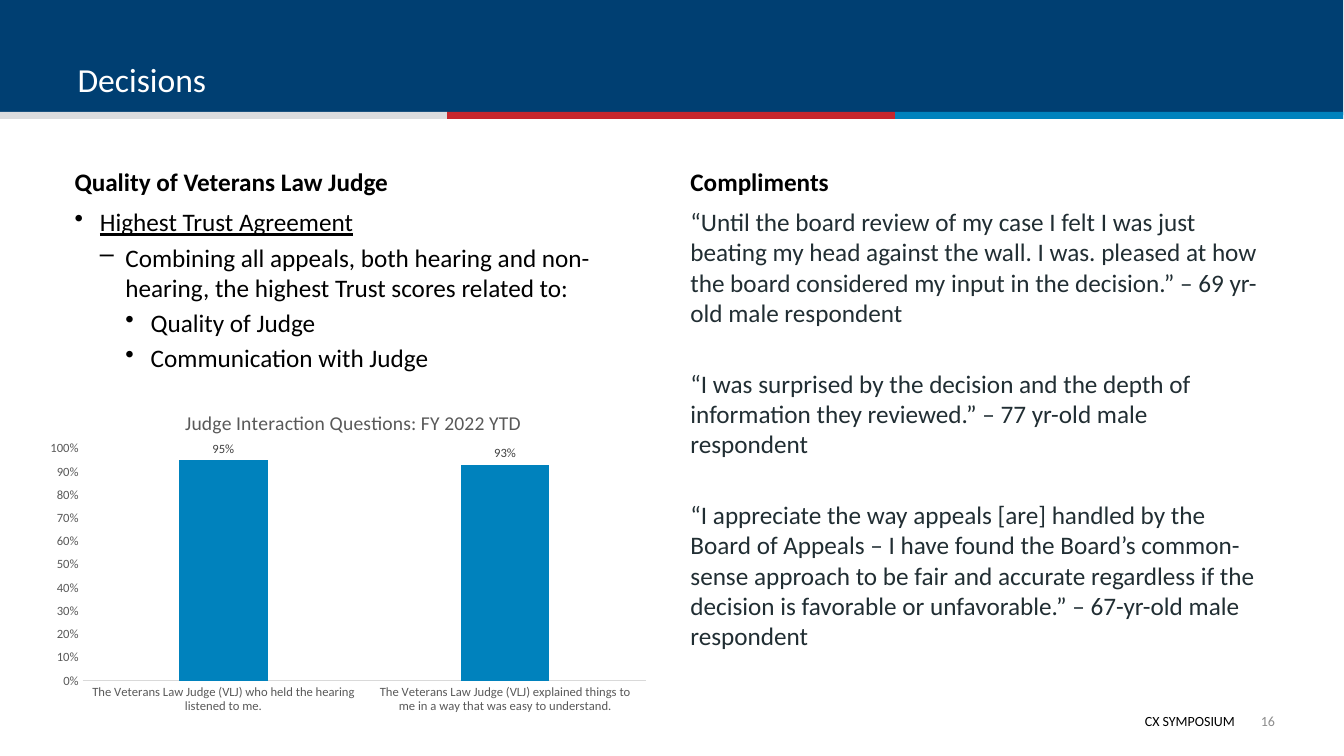
from lxml import etree
from pptx import Presentation
from pptx.chart.data import CategoryChartData
from pptx.dml.color import RGBColor
from pptx.enum.chart import XL_CHART_TYPE, XL_LABEL_POSITION, XL_TICK_MARK
from pptx.enum.shapes import MSO_SHAPE
from pptx.enum.text import MSO_ANCHOR, PP_ALIGN
from pptx.oxml import parse_xml
from pptx.oxml.ns import nsdecls, qn
from pptx.util import Cm, Pt

COLUMN = XL_CHART_TYPE.COLUMN_CLUSTERED
OUTSIDE_END = XL_LABEL_POSITION.OUTSIDE_END
NO_TICK = XL_TICK_MARK.NONE
RECTANGLE = MSO_SHAPE.RECTANGLE
TOP, MIDDLE, BOTTOM = MSO_ANCHOR.TOP, MSO_ANCHOR.MIDDLE, MSO_ANCHOR.BOTTOM
LEFT, RIGHT = PP_ALIGN.LEFT, PP_ALIGN.RIGHT

FONT = "Calibri"
COLORS = {
    "navy": "003F72", "silver": "DBDCDE", "red": "C6262D", "blue": "0082BD",
    "black": "000000", "white": "FFFFFF", "ink": "212E33", "number": "8C8C8C",
    "axis text": "595959", "label text": "404040", "axis line": "D9D9D9",
}

TITLE = "Decisions"
FOOTER = "CX SYMPOSIUM"
SLIDE_NUMBER = "16"
JUDGE_HEADING = "Quality of Veterans Law Judge"
# (level, text)
JUDGE_POINTS = [
    (0, "Highest Trust Agreement"),
    (1, "Combining all appeals, both hearing and non-hearing, "
        "the highest Trust scores related to:"),
    (2, "Quality of Judge"),
    (2, "Communication with Judge"),
]
COMPLIMENTS_HEADING = "Compliments"
COMPLIMENTS = [
    "“Until the board review of my case I felt I was just beating my head against "
    "the wall. I was. pleased at how the board considered my input in the decision.” "
    "– 69 yr-old male respondent",
    "“I was surprised by the decision and the depth of information they reviewed.” "
    "– 77 yr-old male respondent",
    "“I appreciate the way appeals [are] handled by the Board of Appeals – I have "
    "found the Board’s common-sense approach to be fair and accurate regardless if "
    "the decision is favorable or unfavorable.” – 67-yr-old male respondent",
]
CHART_TITLE = "Judge Interaction Questions: FY 2022 YTD"
SCORES = {
    "The Veterans Law Judge (VLJ) who held the hearing listened to me.": 0.95,
    "The Veterans Law Judge (VLJ) explained things to me in a way that was "
    "easy to understand.": 0.93,
}

# Lengths in centimetres
SLIDE_SIZE = (33.87, 19.05)
STRIPES = ["silver", "red", "blue"]
STRIPE_LEFT, STRIPE_TOP, STRIPE_WIDTH, STRIPE_HEIGHT = -0.02, 2.82, 11.29, 0.18
JUDGE_LEFT, COMPLIMENTS_LEFT, COLUMN_WIDTH = 1.63, 17.15, 14.96
HEADING_TOP, HEADING_HEIGHT = 3.3, 1.78
BODY_TOP, BODY_HEIGHT = HEADING_TOP + HEADING_HEIGHT, 12.34
INDENT_STEP = 0.64
BULLETS = "•–•"
# Points
PARAGRAPH_GAP, QUOTE_GAP = 3.6, 29


def format_font(font, size, color, **extra):
    values = {"name": FONT, "size": Pt(size), "bold": False, **extra}
    for name, value in values.items():
        setattr(font, name, value)
    font.color.rgb = RGBColor.from_string(COLORS[color])


def place(shape, box):
    for name, value in zip(("left", "top", "width", "height"), box):
        setattr(shape, name, Cm(value))


def add_bar(slide, box, color):
    bar = slide.shapes.add_shape(RECTANGLE, *map(Cm, box))
    bar.shadow.inherit = False
    bar.fill.solid()
    bar.fill.fore_color.rgb = RGBColor.from_string(COLORS[color])
    bar.line.fill.background()


def write(shape, texts, size, color, anchor=TOP, align=LEFT, gap=0, **font):
    """Fill a shape with one paragraph per text and return the paragraphs."""
    frame = shape.text_frame
    frame.word_wrap = True
    frame.vertical_anchor = anchor
    frame.text = "\n".join(texts)
    for paragraph in frame.paragraphs:
        paragraph.alignment = align
        paragraph.space_before = Pt(gap)
        format_font(paragraph.runs[0].font, size, color, **font)
    return frame.paragraphs


def add_text(slide, box, texts, size, color, **options):
    shape = slide.shapes.add_textbox(*map(Cm, box))
    return shape, write(shape, texts, size, color, **options)


def add_bullet(paragraph, level):
    paragraph.level = level
    properties = paragraph._p.get_or_add_pPr()
    properties.set("marL", str(Cm(INDENT_STEP * (level + 1))))
    properties.set("indent", str(-Cm(INDENT_STEP)))
    bullet = etree.SubElement(properties, qn("a:buChar"))
    bullet.set("char", BULLETS[level])


def set_layout(parent, inner=False, **fractions):
    """Pin a chart part to fractions of the chart area."""
    for old in parent.findall(qn("c:layout")):
        parent.remove(old)
    target = '<c:layoutTarget val="inner"/>' if inner else ""
    modes = "".join(f'<c:{name}Mode val="edge"/>' for name in "xy")
    values = "".join(f'<c:{name} val="{value}"/>' for name, value in fractions.items())
    layout = parse_xml(f'<c:layout {nsdecls("c")}><c:manualLayout>{target}{modes}'
                       f'{values}</c:manualLayout></c:layout>')
    text = parent.find(qn("c:tx"))
    parent.insert(0 if text is None else 1, layout)


def add_score_chart(slide, box):
    data = CategoryChartData(number_format="0%")
    data.categories = list(SCORES)
    data.add_series("Series 1", list(SCORES.values()))
    chart = slide.shapes.add_chart(COLUMN, *map(Cm, box), data).chart
    format_font(chart.font, 10, "black")
    chart.has_legend = False
    chart.has_title = True
    title_frame = chart.chart_title.text_frame
    title_frame.text = CHART_TITLE
    format_font(title_frame.paragraphs[0].runs[0].font, 14, "axis text")
    chart.chart_title.include_in_layout = False
    set_layout(chart.chart_title._element, x=0.23, y=0.05)
    set_layout(chart._chartSpace.chart.plotArea, inner=True,
               x=0.07, y=0.18, w=0.91, h=0.7)

    for axis in (chart.category_axis, chart.value_axis):
        axis.major_tick_mark = axis.minor_tick_mark = NO_TICK
        axis.has_major_gridlines = False
        format_font(axis.tick_labels.font, 9, "axis text")
    category_line = chart.category_axis.format.line
    category_line.width = Pt(0.75)
    category_line.color.rgb = RGBColor.from_string(COLORS["axis line"])
    value_axis = chart.value_axis
    value_axis.format.line.fill.background()
    value_axis.minimum_scale, value_axis.maximum_scale = 0, 1
    value_axis.major_unit = 0.1
    value_axis.tick_labels.number_format = "0%"
    value_axis.tick_labels.number_format_is_linked = False

    plot = chart.plots[0]
    plot.gap_width, plot.overlap = 219, -27
    plot.vary_by_categories = False
    fill = plot.series[0].format.fill
    fill.solid()
    fill.fore_color.rgb = RGBColor.from_string(COLORS["blue"])
    plot.has_data_labels = True
    labels = plot.data_labels
    label_format = {"show_value": True, "position": OUTSIDE_END,
                    "number_format": "0%", "number_format_is_linked": False}
    for name, value in label_format.items():
        setattr(labels, name, value)
    format_font(labels.font, 9, "label text")


def main():
    presentation = Presentation()
    presentation.slide_width, presentation.slide_height = map(Cm, SLIDE_SIZE)
    slide = presentation.slides.add_slide(presentation.slide_layouts[5])

    add_bar(slide, (STRIPE_LEFT, 0, SLIDE_SIZE[0], 2.9), "navy")
    for index, color in enumerate(STRIPES):
        left = STRIPE_LEFT + index * STRIPE_WIDTH
        add_bar(slide, (left, STRIPE_TOP, STRIPE_WIDTH, STRIPE_HEIGHT), color)

    title = slide.shapes.title
    place(title, (1.7, 0.36, 30.48, 2.26))
    write(title, [TITLE], 24, "white", anchor=BOTTOM)
    slide.shapes._spTree.append(title._element)

    for left, heading in ((JUDGE_LEFT, JUDGE_HEADING),
                          (COMPLIMENTS_LEFT, COMPLIMENTS_HEADING)):
        add_text(slide, (left, HEADING_TOP, COLUMN_WIDTH, HEADING_HEIGHT), [heading],
                 18, "black", anchor=BOTTOM, gap=PARAGRAPH_GAP, bold=True)

    points = add_text(slide, (JUDGE_LEFT, BODY_TOP, COLUMN_WIDTH, BODY_HEIGHT),
                      [text for _, text in JUDGE_POINTS], 18, "black",
                      gap=PARAGRAPH_GAP)[1]
    for paragraph, (level, _) in zip(points, JUDGE_POINTS):
        add_bullet(paragraph, level)
        paragraph.runs[0].font.underline = level == 0

    quotes = add_text(slide, (COMPLIMENTS_LEFT, BODY_TOP, COLUMN_WIDTH, BODY_HEIGHT),
                      COMPLIMENTS, 18, "ink", gap=QUOTE_GAP)[1]
    quotes[0].space_before = Pt(PARAGRAPH_GAP)

    add_text(slide, (14, 17.83, 17.37, 0.69), [FOOTER], 10, "black", align=RIGHT)
    number = add_text(slide, (31.22, 17.65, 0.91, 1.02), [SLIDE_NUMBER], 10, "number",
                      anchor=MIDDLE, align=RIGHT)[0]
    for side in ("left", "top", "right", "bottom"):
        setattr(number.text_frame, f"margin_{side}", 0)

    add_score_chart(slide, (0.99, 9.8, 15.6, 8.36))
    presentation.save("out.pptx")


if __name__ == "__main__":
    main()
